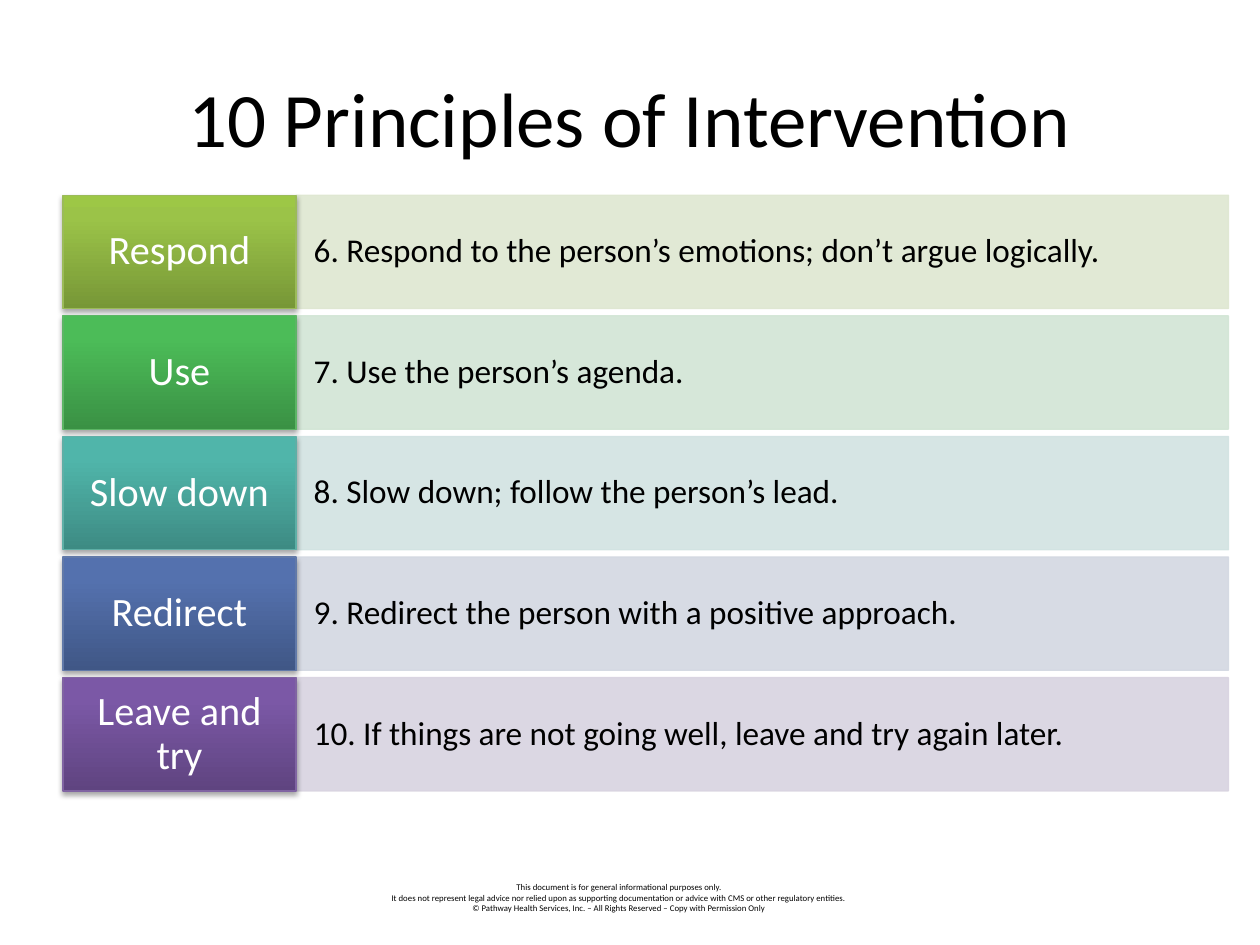
"""Build the slide that lists principles 6 to 10 of intervention."""

from lxml.etree import SubElement
from pptx import Presentation
from pptx.dml.color import RGBColor
from pptx.enum.shapes import MSO_SHAPE as Shape
from pptx.enum.text import MSO_ANCHOR as Anchor, PP_ALIGN as Align
from pptx.oxml.ns import qn
from pptx.util import Inches, Pt

COLORS = {
    "black": "000000", "white": "FFFFFF",
    "lime": ("DEE7D1", "9BBB59", ("779737", "9BC348", "9DC746")),
    "green": ("D2E5D5", "5CB565", ("3A9144", "4CBC58", "4ABF57")),
    "teal": ("D2E3E2", "5EAFA6", ("3D8B83", "50B5AA", "4EB8AC")),
    "blue": ("D3D8E2", "6179A8", ("405786", "5471AE", "5271B0")),
    "purple": ("D8D3E0", "8064A2", ("5F4480", "7B58A6", "7C57A8")),
}
PRINCIPLES = [
    ("lime", "Respond", "6. Respond to the person’s emotions; don’t argue logically."),
    ("green", "Use", "7. Use the person’s agenda."),
    ("teal", "Slow down", "8. Slow down; follow the person’s lead."),
    ("blue", "Redirect", "9. Redirect the person with a positive approach."),
    ("purple", "Leave and try", "10. If things are not going well, leave and try again later."),
]
DISCLAIMER = [
    "This document is for general informational purposes only.",
    "It does not represent legal advice nor relied upon as supporting documentation "
    "or advice with CMS or other regulatory entities.",
    "© Pathway Health Services, Inc. – All Rights Reserved – Copy with Permission Only",
]
ROW_TOP, ROW_HEIGHT, ROW_STEP = 1.55, 0.9, 0.957


def write_text(frame, *lines, size, color=COLORS["black"], align=Align.CENTER,
               anchor=Anchor.MIDDLE, spacing=None, margins=(0.1, 0.05)):
    """Fill a text frame with one formatted paragraph per line."""
    frame.word_wrap = True
    frame.vertical_anchor = anchor
    frame.margin_left = frame.margin_right = Inches(margins[0])
    frame.margin_top = frame.margin_bottom = Inches(margins[1])
    for index, line in enumerate(lines):
        paragraph = frame.paragraphs[0] if index == 0 else frame.add_paragraph()
        paragraph.alignment = align
        if spacing:
            paragraph.line_spacing = spacing
        run = paragraph.add_run()
        run.text = line
        run.font.name = "Calibri"
        run.font.size = Pt(size)
        run.font.color.rgb = RGBColor.from_string(color)


def add_color(parent, color, alpha=100):
    """Append an RGB colour with an opacity in percent."""
    element = SubElement(parent, qn("a:srgbClr"), val=color)
    SubElement(element, qn("a:alpha"), val=str(alpha * 1000))


class SlideBuilder:
    """Hold the slide and add its elements in one style."""

    def __init__(self, presentation):
        """Start a slide that has only a title."""
        self.slide = presentation.slides.add_slide(presentation.slide_layouts[5])

    def title(self, text):
        """Place the title."""
        title = self.slide.shapes.title
        title.left, title.top = Inches(0.5), Inches(0.3)
        title.width, title.height = Inches(9), Inches(1.25)
        write_text(title.text_frame, text, size=44)

    def footer(self, lines):
        """Place the small print."""
        box = self.slide.shapes.add_textbox(
            Inches(2.75), Inches(6.95), Inches(4.33), Inches(0.35))
        write_text(box.text_frame, *lines, size=5, anchor=Anchor.TOP)

    def rectangle(self, left, top, width, line_color):
        """Add a row rectangle with a thin outline and no shadow."""
        shape = self.slide.shapes.add_shape(
            Shape.RECTANGLE, Inches(left), Inches(top), Inches(width), Inches(ROW_HEIGHT))
        shape.line.color.rgb = RGBColor.from_string(line_color)
        shape.line.width = Pt(0.75)
        shape.shadow.inherit = False
        return shape

    def bar(self, top, text, color):
        """Add the pale bar with the full principle."""
        shape = self.rectangle(2.35, top, 7.4, color)
        shape.fill.solid()
        shape.fill.fore_color.rgb = RGBColor.from_string(color)
        for element in shape._element.spPr.iter(qn("a:srgbClr")):
            SubElement(element, qn("a:alpha"), val="90000")
        write_text(shape.text_frame, text, size=19, align=Align.LEFT,
                   spacing=0.9, margins=(0.14, 0.23))

    def label(self, top, text, line_color, gradient):
        """Add the shaded keyword block with its shadow."""
        shape = self.rectangle(0.5, top, 1.85, line_color)
        shape.fill.gradient()
        shape.fill.gradient_angle = 90
        properties = shape._element.spPr
        stops = properties.find(".//" + qn("a:gsLst"))
        for stop in list(stops):
            stops.remove(stop)
        for position, color in zip((0, 80, 100), gradient):
            add_color(SubElement(stops, qn("a:gs"), pos=str(position * 1000)), color)
        shadow = SubElement(
            properties.find(qn("a:effectLst")), qn("a:outerShdw"), blurRad=str(Pt(3.1)),
            dist=str(Pt(1.8)), dir="5400000", rotWithShape="0")
        add_color(shadow, COLORS["black"], 35)
        write_text(shape.text_frame, text, size=23, color=COLORS["white"],
                   spacing=0.9, margins=(0.1, 0.09))


def main():
    """Build and save the presentation."""
    presentation = Presentation()
    presentation.slide_width, presentation.slide_height = Inches(10), Inches(7.5)
    builder = SlideBuilder(presentation)
    builder.footer(DISCLAIMER)
    builder.title("10 Principles of Intervention")
    for index, (hue, keyword, principle) in enumerate(PRINCIPLES):
        pale, outline, gradient = COLORS[hue]
        top = ROW_TOP + index * ROW_STEP
        builder.bar(top, principle, pale)
        builder.label(top, keyword, outline, gradient)
    presentation.save("out.pptx")


if __name__ == "__main__":
    main()
